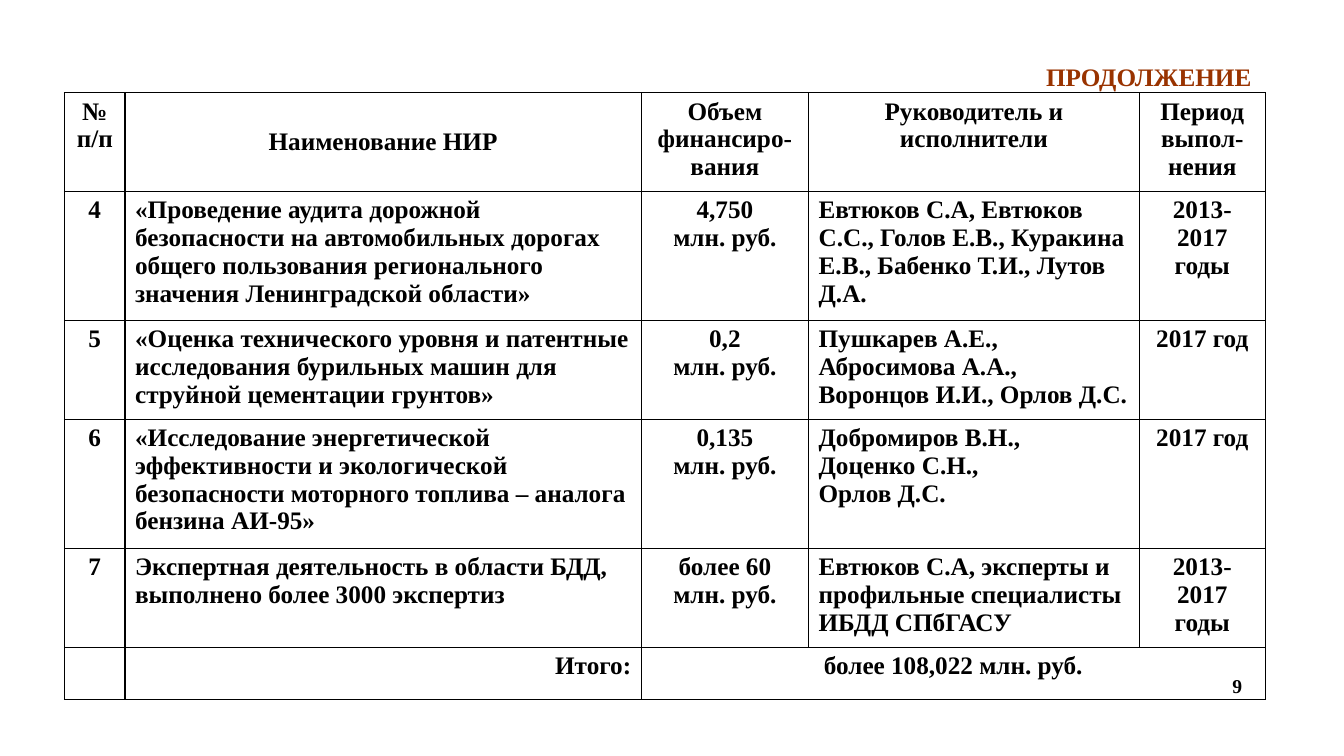
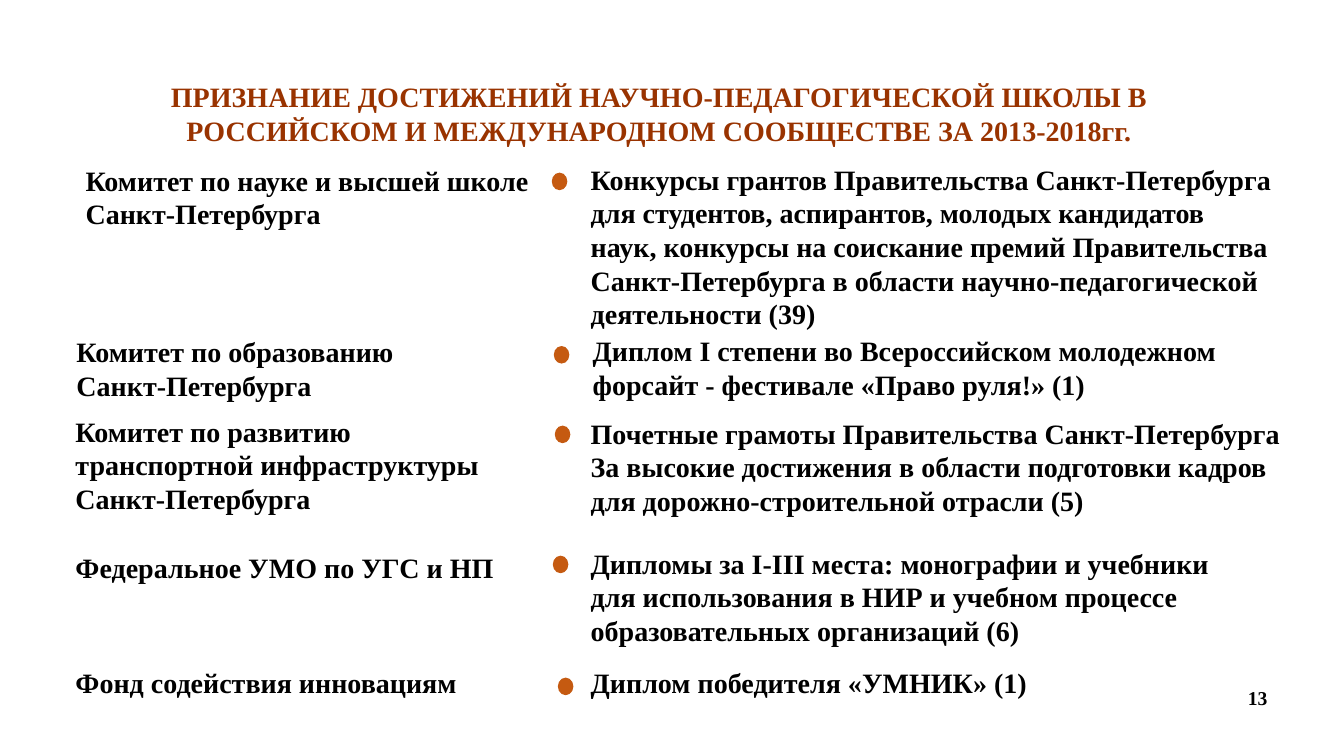
from pptx import Presentation
from pptx.dml.color import RGBColor
from pptx.enum.shapes import MSO_SHAPE
from pptx.enum.text import MSO_ANCHOR, PP_ALIGN
from pptx.oxml.ns import qn
from pptx.util import Inches, Pt
from lxml.etree import SubElement

COLORS = {"text": "000000", "title": "993300", "dot": "C55A11", "border": "000000"}
FONT = "Times New Roman"
TEXT_SPACING = 1.2
TABLE_SPACING = 1.1
LEFT, CENTER, RIGHT = PP_ALIGN.LEFT, PP_ALIGN.CENTER, PP_ALIGN.RIGHT
TOP, MIDDLE = MSO_ANCHOR.TOP, MSO_ANCHOR.MIDDLE

COLUMN_WIDTHS = [0.6, 5.12, 1.66, 3.28, 1.25]
ROW_HEIGHTS = [0.98, 1.28, 0.98, 1.28, 0.98, 0.52]
COLUMN_ALIGNMENTS = [CENTER, LEFT, CENTER, LEFT, CENTER]
RESEARCH_ROWS = [
    [["№ п/п"], ["Наименование НИР"], ["Объем финансиро-", "вания"],
     ["Руководитель и исполнители"], ["Период выпол-нения"]],
    [["4"],
     ["«Проведение аудита дорожной безопасности на автомобильных дорогах общего "
      "пользования регионального значения Ленинградской области»"],
     ["4,750", "млн. руб."],
     ["Евтюков С.А, Евтюков С.С., Голов Е.В., Куракина Е.В., Бабенко Т.И., Лутов Д.А."],
     ["2013-2017 годы"]],
    [["5"],
     ["«Оценка технического уровня и патентные исследования бурильных машин для "
      "струйной цементации грунтов»"],
     ["0,2", "млн. руб."],
     ["Пушкарев А.Е., Абросимова А.А., Воронцов И.И., Орлов Д.С."],
     ["2017 год"]],
    [["6"],
     ["«Исследование энергетической эффективности и экологической безопасности "
      "моторного топлива – аналога бензина АИ-95»"],
     ["0,135", "млн. руб."],
     ["Добромиров В.Н.,", "Доценко С.Н.,", "Орлов Д.С."],
     ["2017 год"]],
    [["7"],
     ["Экспертная деятельность в области БДД,", "выполнено более 3000 экспертиз"],
     ["более 60 млн. руб."],
     ["Евтюков С.А, эксперты и профильные специалисты ИБДД СПбГАСУ"],
     ["2013-2017 годы"]],
    [[], ["Итого:"], ["более 108,022 млн. руб."], [], []],
]

AWARDS = [
    {"organization": ["Комитет по науке и высшей школе Санкт-Петербурга"],
     "organization_box": (0.75, 1.57, 5.01, 0.77),
     "award": ["Конкурсы грантов Правительства Санкт-Петербурга для студентов, "
               "аспирантов, молодых кандидатов наук, конкурсы на соискание премий "
               "Правительства Санкт-Петербурга в области научно-педагогической "
               "деятельности (39)"],
     "award_box": (5.76, 1.56, 6.99, 1.78), "dot": (5.48, 1.72)},
    {"organization": ["Комитет по образованию", "Санкт-Петербурга"],
     "organization_box": (0.66, 3.27, 5.01, 0.77),
     "award": ["Диплом I степени во Всероссийском молодежном форсайт - фестивале "
               "«Право руля!» (1)"],
     "award_box": (5.78, 3.26, 6.67, 0.77), "dot": (5.5, 3.44)},
    {"organization": ["Комитет по развитию транспортной инфраструктуры Санкт-Петербурга"],
     "organization_box": (0.65, 4.06, 4.42, 1.11),
     "award": ["Почетные грамоты Правительства Санкт-Петербурга",
               "За высокие достижения в области подготовки кадров для "
               "дорожно-строительной отрасли (5)"],
     "award_box": (5.76, 4.08, 7.19, 1.11), "dot": (5.51, 4.23)},
    {"organization": ["Федеральное УМО по УГС и НП"],
     "organization_box": (0.65, 5.41, 4.45, 0.44),
     "award": ["Дипломы за I-III места: монографии и учебники для использования в НИР "
               "и учебном процессе образовательных организаций (6)"],
     "award_box": (5.76, 5.37, 6.76, 1.11), "dot": (5.49, 5.52)},
    {"organization": ["Фонд содействия инновациям"],
     "organization_box": (0.65, 6.55, 4.01, 0.44),
     "award": ["Диплом победителя «УМНИК» (1)"],
     "award_box": (5.76, 6.55, 6.82, 0.44), "dot": (5.54, 6.73)},
]


def color(name):
    return RGBColor.from_string(COLORS[name])


def write_text(frame, lines, size, alignment=LEFT, color_name="text", spacing=TEXT_SPACING):
    frame.word_wrap = True
    for index, line in enumerate(lines):
        paragraph = frame.add_paragraph() if index else frame.paragraphs[0]
        paragraph.alignment = alignment
        paragraph.line_spacing = Pt(round(size * spacing, 1))
        run = paragraph.add_run()
        run.text = line
        run.font.name = FONT
        run.font.size = Pt(size)
        run.font.bold = True
        run.font.color.rgb = color(color_name)


def add_text(slide, box, lines, size, alignment=LEFT, color_name="text", anchor=TOP):
    shape = slide.shapes.add_textbox(*map(Inches, box))
    shape.text_frame.vertical_anchor = anchor
    write_text(shape.text_frame, lines, size, alignment, color_name)


def add_title(slide, box, title, size, alignment):
    add_text(slide, box, [title], size, alignment, "title")


def add_slide_number(slide, left, top, number):
    add_text(slide, (left, top, 3, 0.4), [str(number)], 14, RIGHT, anchor=MIDDLE)


def add_borders(cell):
    properties = cell._tc.get_or_add_tcPr()
    for position, side in enumerate(("lnL", "lnR", "lnT", "lnB")):
        line = SubElement(properties, qn(f"a:{side}"), w=str(Pt(1)))
        properties.insert(position, line)
        fill = SubElement(line, qn("a:solidFill"))
        SubElement(fill, qn("a:srgbClr"), val=COLORS["border"])


def add_research_table(slide, left, top):
    shape = slide.shapes.add_table(
        len(ROW_HEIGHTS), len(COLUMN_WIDTHS), Inches(left), Inches(top),
        Inches(sum(COLUMN_WIDTHS)), Inches(sum(ROW_HEIGHTS)))
    table = shape.table
    table.first_row = False
    table.horz_banding = False
    for column, width in zip(table.columns, COLUMN_WIDTHS):
        column.width = Inches(width)
    for row, height in zip(table.rows, ROW_HEIGHTS):
        row.height = Inches(height)
    total_row = len(RESEARCH_ROWS) - 1
    for row_index, row in enumerate(RESEARCH_ROWS):
        for column_index, lines in enumerate(row):
            cell = table.cell(row_index, column_index)
            cell.fill.background()
            add_borders(cell)
            alignment = CENTER if row_index == 0 else COLUMN_ALIGNMENTS[column_index]
            if row_index == total_row and column_index == 1:
                alignment = RIGHT
            write_text(cell.text_frame, lines, 18, alignment, spacing=TABLE_SPACING)
    table.cell(0, 1).vertical_anchor = MIDDLE
    table.cell(total_row, 2).merge(table.cell(total_row, 4))


def add_dot(slide, left, top):
    dot = slide.shapes.add_shape(
        MSO_SHAPE.OVAL, Inches(left), Inches(top), Inches(0.14), Inches(0.16))
    dot.shadow.inherit = False
    dot.fill.solid()
    dot.fill.fore_color.rgb = color("dot")
    dot.line.color.rgb = color("dot")
    dot.line.width = Pt(1)


def add_award(slide, entry):
    add_text(slide, entry["organization_box"], entry["organization"], 20)
    add_dot(slide, *entry["dot"])
    add_text(slide, entry["award_box"], entry["award"], 20)


def build_research_slide(slide):
    add_research_table(slide, 0.64, 0.92)
    add_title(slide, (9.4, 0.56, 3.11, 0.4), "ПРОДОЛЖЕНИЕ", 18, RIGHT)
    add_slide_number(slide, 9.42, 6.6, 9)


def build_awards_slide(slide):
    add_title(slide, (1.24, 0.74, 10.59, 0.77),
              "ПРИЗНАНИЕ ДОСТИЖЕНИЙ НАУЧНО-ПЕДАГОГИЧЕСКОЙ ШКОЛЫ В РОССИЙСКОМ И "
              "МЕЖДУНАРОДНОМ СООБЩЕСТВЕ ЗА 2013-2018гг.", 20, CENTER)
    for entry in AWARDS:
        add_award(slide, entry)
    add_slide_number(slide, 9.67, 6.72, 13)


def main():
    presentation = Presentation()
    presentation.slide_width = Inches(13.33)
    presentation.slide_height = Inches(7.5)
    for build_slide in (build_research_slide, build_awards_slide):
        build_slide(presentation.slides.add_slide(presentation.slide_layouts[6]))
    presentation.save("out.pptx")


if __name__ == "__main__":
    main()
